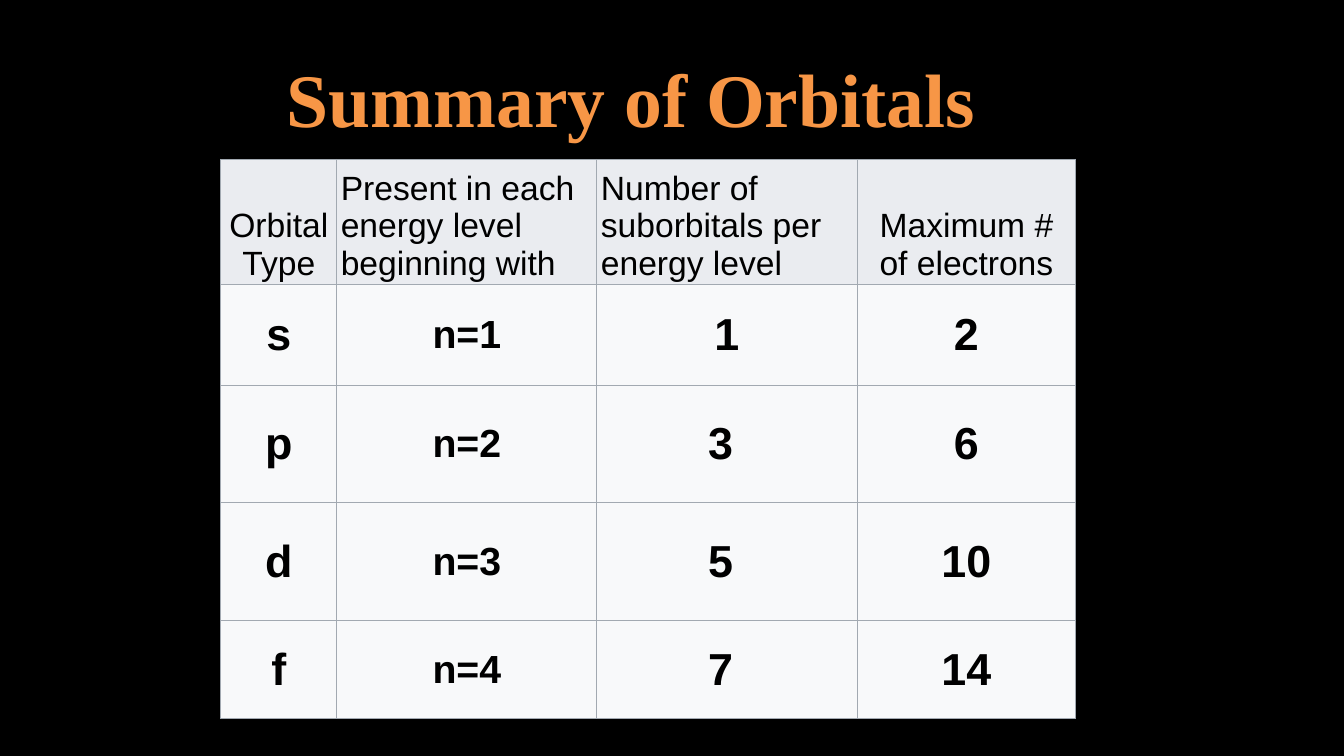
from lxml import etree
from pptx import Presentation
from pptx import util as u
from pptx.dml import color
from pptx.enum import text
from pptx.oxml import ns

HEADINGS = [
    "Orbital Type",
    "Present in each energy level beginning with",
    "Number of suborbitals per energy level",
    "Maximum # of electrons",
]
ORBITALS = [
    ["s", "n=1", "1", "2"],
    ["p", "n=2", "3 ", "6"],
    ["d", "n=3", "5 ", "10"],
    ["f", "n=4", "7 ", "14"],
]
COLUMN_WIDTHS = [1.15, 2.58, 2.58, 2.17]
ROW_HEIGHTS = [1, 1, 1.17, 1.17, 0.97]
HEADING_ALIGNMENT = ["CENTER", "LEFT", "LEFT", "CENTER"]
ORBITAL_SIZES = [32, 28, 32, 32]


def rgb(value):
    return color.RGBColor.from_string(value)


def apply(target, values):
    for name, value in values.items():
        setattr(target, name, value)


def write(frame, words, alignment, ink, font):
    para = frame.paragraphs[0]
    para.alignment = getattr(text.PP_ALIGN, alignment)
    span = para.add_run()
    span.text = words
    apply(span.font, font)
    span.font.color.rgb = rgb(ink)


def add_title(page, left, top, width, height):
    box = page.shapes.add_textbox(*map(u.Inches, (left, top, width, height)))
    apply(box.text_frame, {"word_wrap": True, "vertical_anchor": text.MSO_ANCHOR.MIDDLE})
    font = {"name": "Times New Roman", "size": u.Pt(54), "bold": True}
    write(box.text_frame, "Summary of Orbitals", "CENTER", "F79646", font)


def add_borders(cell, ink, points):
    properties = cell._tc.get_or_add_tcPr()
    for position, side in enumerate("LRTB"):
        line = etree.Element(ns.qn(f"a:ln{side}"), w=str(u.Pt(points)))
        fill = etree.SubElement(line, ns.qn("a:solidFill"))
        etree.SubElement(fill, ns.qn("a:srgbClr"), val=ink)
        properties.insert(position, line)


def fill_cell(cell, words, is_heading, column):
    anchor = text.MSO_ANCHOR.BOTTOM if is_heading else text.MSO_ANCHOR.MIDDLE
    apply(cell, {
        "margin_left": u.Inches(0.04),
        "margin_right": u.Inches(0.04),
        "margin_top": u.Inches(0.02),
        "margin_bottom": u.Inches(0.02),
        "vertical_anchor": anchor,
    })
    cell.fill.solid()
    cell.fill.fore_color.rgb = rgb("EAECF0" if is_heading else "F8F9FA")
    add_borders(cell, "A2A9B1", 0.75)
    size = 24 if is_heading else ORBITAL_SIZES[column]
    alignment = HEADING_ALIGNMENT[column] if is_heading else "CENTER"
    font = {"name": "Arial", "size": u.Pt(size), "bold": not is_heading}
    write(cell.text_frame, words, alignment, "000000", font)


def add_orbital_table(page, left, top, width, height):
    rows = [HEADINGS, *ORBITALS]
    bounds = map(u.Inches, (left, top, width, height))
    table = page.shapes.add_table(len(rows), len(HEADINGS), *bounds).table
    apply(table, {"first_row": False, "horz_banding": False})
    for column, width in zip(table.columns, COLUMN_WIDTHS):
        column.width = u.Inches(width)
    for row, height in zip(table.rows, ROW_HEIGHTS):
        row.height = u.Inches(height)
    for row_index, row in enumerate(rows):
        for column, words in enumerate(row):
            fill_cell(table.cell(row_index, column), words, row_index == 0, column)


def main():
    deck = Presentation()
    apply(deck, {"slide_width": u.Inches(13.33), "slide_height": u.Inches(7.5)})
    page = deck.slides.add_slide(deck.slide_layouts[6])
    page.background.fill.solid()
    page.background.fill.fore_color.rgb = rgb("000000")
    add_title(page, 2.17, 0.5, 8.17, 0.92)
    add_orbital_table(page, 2.19, 1.58, 8.48, 5.55)
    deck.save("out.pptx")


if __name__ == "__main__":
    main()
